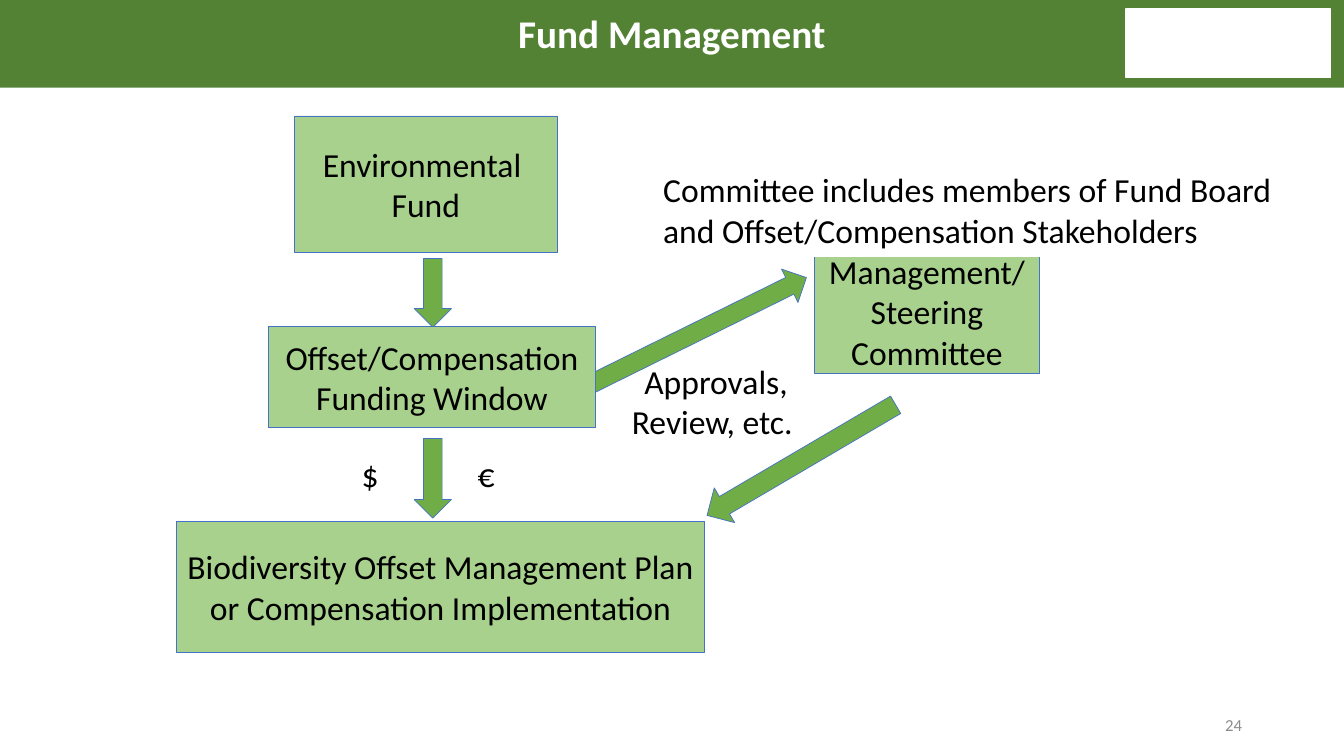
from pptx import Presentation
from pptx.dml.color import RGBColor
from pptx.enum.shapes import MSO_SHAPE
from pptx.enum.text import MSO_ANCHOR, PP_ALIGN
from pptx.util import Pt

RECTANGLE, DOWN_ARROW = MSO_SHAPE.RECTANGLE, MSO_SHAPE.DOWN_ARROW
TOP, MIDDLE = MSO_ANCHOR.TOP, MSO_ANCHOR.MIDDLE
LEFT, CENTER, RIGHT = PP_ALIGN.LEFT, PP_ALIGN.CENTER, PP_ALIGN.RIGHT

BLACK, WHITE, GRAY = "000000", "FFFFFF", "8C8C8C"
BANNER_GREEN, ARROW_GREEN, BOX_GREEN = "548235", "70AD47", "A9D18E"
OUTLINE_BLUE = "4472C4"


def color(value):
    return RGBColor.from_string(value)


def write(frame, text, size=24, ink=BLACK, bold=False, align=LEFT,
          anchor=TOP, spacing=None):
    frame.word_wrap = True
    frame.vertical_anchor = anchor
    frame.text = text
    for paragraph in frame.paragraphs:
        paragraph.alignment = align
        if spacing:
            paragraph.line_spacing = spacing
        font = paragraph.runs[0].font
        font.name = "Calibri"
        font.size = Pt(size)
        font.bold = bold
        font.color.rgb = color(ink)


def add_block(slide, kind, bounds, fill, outline=None, weight=0.5):
    block = slide.shapes.add_shape(kind, *map(Pt, bounds))
    block.shadow.inherit = False
    block.fill.solid()
    block.fill.fore_color.rgb = color(fill)
    if outline:
        block.line.color.rgb = color(outline)
        block.line.width = Pt(weight)
    else:
        block.line.fill.background()
    return block


def add_step(slide, text, bounds):
    step = add_block(slide, RECTANGLE, bounds, BOX_GREEN, OUTLINE_BLUE)
    write(step.text_frame, text, align=CENTER, anchor=MIDDLE)


def add_arrow(slide, bounds, angle=0):
    arrow = add_block(slide, DOWN_ARROW, bounds, ARROW_GREEN, OUTLINE_BLUE)
    arrow.rotation = angle


def add_label(slide, text, bounds, **text_format):
    label = slide.shapes.add_textbox(*map(Pt, bounds))
    write(label.text_frame, text, **text_format)


def main():
    presentation = Presentation()
    presentation.slide_width = Pt(960)
    presentation.slide_height = Pt(540)
    slide = presentation.slides.add_slide(presentation.slide_layouts[6])

    add_label(slide, "24", (830.9, 506.9, 63.4, 22.3),
              size=12, ink=GRAY, align=RIGHT, anchor=MIDDLE)
    add_block(slide, RECTANGLE, (0, -2.2, 960, 64.8), BANNER_GREEN)
    add_block(slide, RECTANGLE, (804.2, 6.5, 146.2, 49), WHITE, WHITE, 1)

    add_arrow(slide, (476.6, 144.7, 26.6, 192.2), 243.7)
    add_step(slide, "Environmental \nFund", (210.2, 82.8, 187.9, 97.2))
    add_arrow(slide, (295.9, 184.7, 26.6, 49))
    add_step(slide, "Offset/Compensation Funding Window",
             (191.5, 233.3, 234, 72))
    add_arrow(slide, (295.9, 313.2, 26.6, 56.9))
    add_step(slide, "Management/Steering Committee",
             (581.8, 177.8, 160.6, 89.3))
    add_label(slide, "Approvals, Review, etc. ",
              (440.6, 254.2, 141.8, 65.5), align=CENTER)
    add_step(slide, "Biodiversity Offset Management Plan or "
             "Compensation Implementation", (126, 372.2, 377.3, 93.6))
    add_label(slide, "$", (251.3, 320.4, 44.6, 36))
    add_label(slide, "€", (334.1, 320.4, 31.7, 36))
    add_arrow(slide, (558, 250.6, 28.8, 156.2), 59.6)

    committee_note = add_block(slide, RECTANGLE,
                               (466.6, 117.4, 454.3, 65.5), WHITE, WHITE, 1)
    write(committee_note.text_frame,
          "Committee includes members of Fund Board and "
          "Offset/Compensation Stakeholders")
    add_label(slide, "Fund Management", (131.8, 7.2, 696.2, 38.2),
              size=28, ink=WHITE, bold=True, align=CENTER, spacing=0.9)

    presentation.save("out.pptx")


if __name__ == "__main__":
    main()
